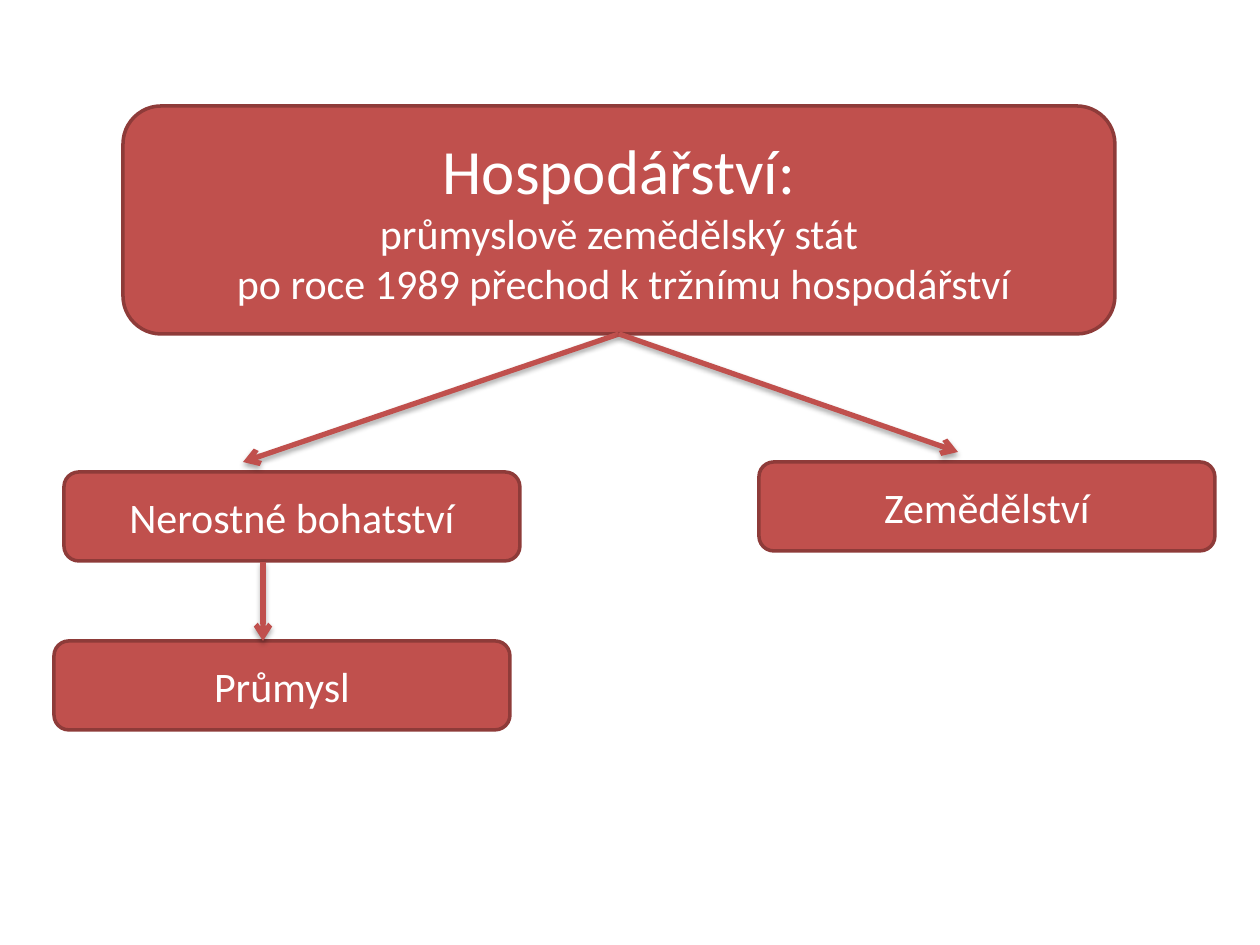
import pptx
import pptx.util
import pptx.dml.color
import pptx.enum.shapes
import pptx.enum.text
import pptx.oxml

PX = 914400 // 126
RED, DARK_RED, WHITE = "C0504D", "8E3B39", "FFFFFF"
FONT = "Calibri"
SMALL_BOX = (456, 89)

# Boxes: name -> (left, top), (width, height), lines of (text, points)
BOXES = {
    "agriculture": ((759, 462), SMALL_BOX, [("Zemědělství", 24)]),
    "economy": ((123, 106), (992, 228), [
        ("Hospodářství:", 36),
        ("průmyslově zemědělský stát", 24),
        (" po roce 1989 přechod k tržnímu hospodářství", 24),
    ]),
    "industry": ((54, 641), SMALL_BOX, [("Průmysl", 24)]),
    "minerals": ((64, 472), SMALL_BOX, [("Nerostné bohatství", 24)]),
}

# Arrows: start, end, box whose bottom middle is the start
ARROWS = [
    ((619, 334), (243, 462), "economy"),
    ((263, 562), (263, 641), None),
    ((619, 334), (958, 452), "economy"),
]

NS = 'xmlns:a="http://schemas.openxmlformats.org/drawingml/2006/main"'
ARROWHEAD = f'<a:tailEnd {NS} type="arrow"/>'
SHADOW = (
    f'<a:effectLst {NS}><a:outerShdw blurRad="40000" dist="23000" dir="5400000" '
    'rotWithShape="0"><a:srgbClr val="000000"><a:alpha val="35000"/></a:srgbClr>'
    '</a:outerShdw></a:effectLst>'
)


def color(value):
    return pptx.dml.color.RGBColor.from_string(value)


def set_line(line, value, points):
    line.color.rgb = color(value)
    line.width = pptx.util.Pt(points)


def add_box(page, position, size, lines):
    box = page.shapes.add_shape(
        pptx.enum.shapes.MSO_SHAPE.ROUNDED_RECTANGLE,
        *(value * PX for value in position + size))
    box.shadow.inherit = False
    box.fill.solid()
    box.fill.fore_color.rgb = color(RED)
    set_line(box.line, DARK_RED, 2)
    frame = box.text_frame
    frame.word_wrap = True
    frame.vertical_anchor = pptx.enum.text.MSO_ANCHOR.MIDDLE
    for index, (text, points) in enumerate(lines):
        para = frame.add_paragraph() if index else frame.paragraphs[0]
        para.text = text
        para.alignment = pptx.enum.text.PP_ALIGN.CENTER
        para.font.name = FONT
        para.font.size = pptx.util.Pt(points)
        para.font.color.rgb = color(WHITE)
    return box


def add_arrow(page, start, end, source):
    arrow = page.shapes.add_connector(
        pptx.enum.shapes.MSO_CONNECTOR.STRAIGHT,
        *(value * PX for value in start + end))
    if source is not None:
        arrow.begin_connect(source, 2)
    set_line(arrow.line, RED, 3)
    arrow.line._get_or_add_ln().append(pptx.oxml.parse_xml(ARROWHEAD))
    arrow._element.spPr.append(pptx.oxml.parse_xml(SHADOW))


def main():
    deck = pptx.Presentation()
    deck.slide_width, deck.slide_height = 1260 * PX, 945 * PX
    page = deck.slides.add_slide(deck.slide_layouts[6])
    boxes = {name: add_box(page, *parts) for name, parts in BOXES.items()}
    for start, end, source in ARROWS:
        add_arrow(page, start, end, boxes.get(source))
    deck.save("out.pptx")


if __name__ == "__main__":
    main()
